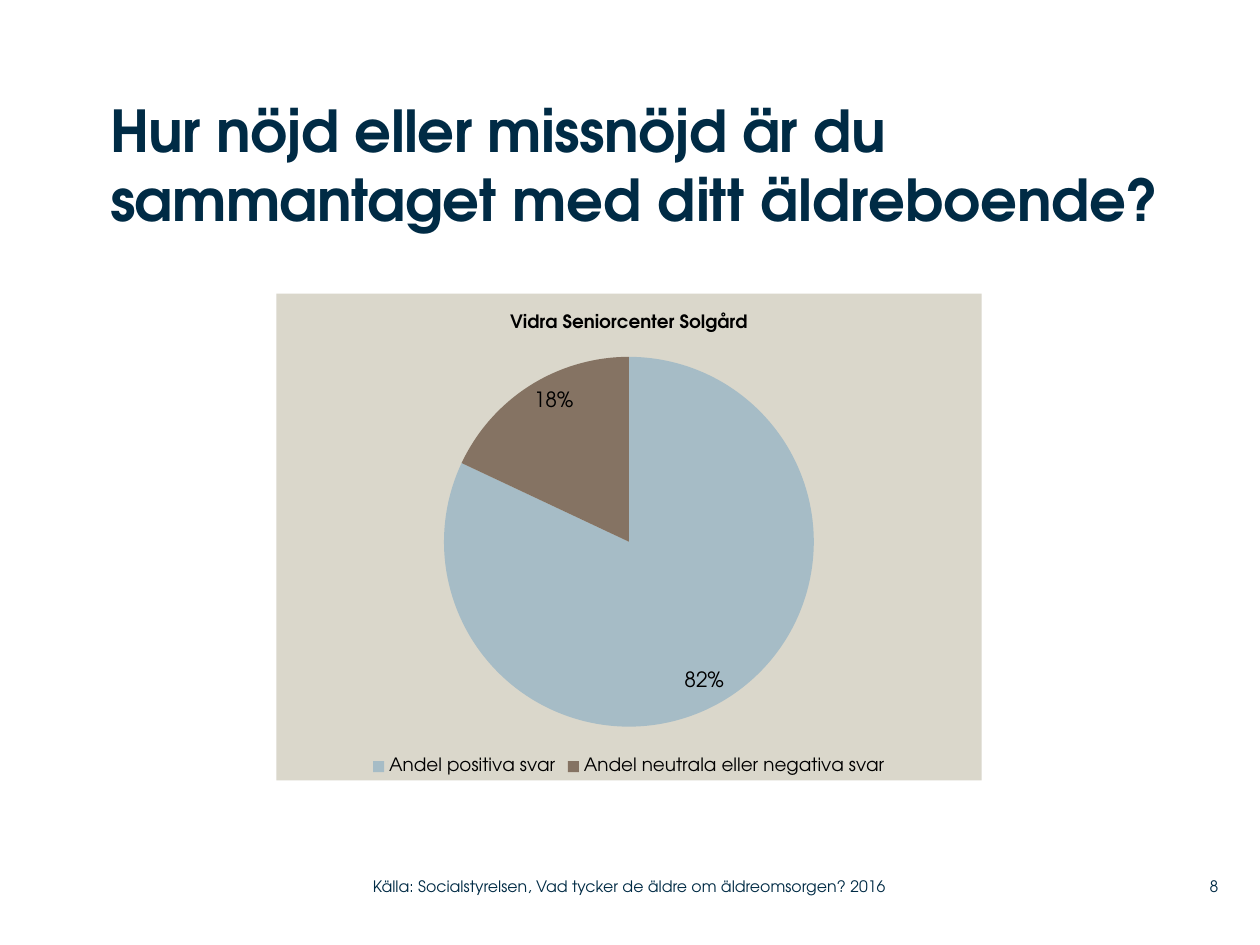
from dataclasses import dataclass

from lxml.etree import SubElement
from pptx import Presentation
from pptx.chart.data import CategoryChartData
from pptx.dml.color import RGBColor
from pptx.enum.chart import XL_CHART_TYPE as ChartType
from pptx.enum.chart import XL_LABEL_POSITION as LabelPosition
from pptx.enum.chart import XL_LEGEND_POSITION as LegendPosition
from pptx.enum.text import MSO_ANCHOR as Anchor
from pptx.enum.text import MSO_AUTO_SIZE as AutoSize
from pptx.enum.text import PP_ALIGN as Align
from pptx.oxml import parse_xml
from pptx.oxml.ns import nsdecls, qn
from pptx.util import Cm, Pt


@dataclass(frozen=True)
class Theme:
    font: str = "TeX Gyre Adventor"
    navy: str = "002B45"
    black: str = "000000"
    sand: str = "DAD7CB"
    blue: str = "A6BCC6"
    brown: str = "857363"
    title: float = 33
    chart: float = 18
    label: float = 12
    caption: float = 10.5
    footer: float = 9


theme = Theme()


def style(font, size, color, bold=False):
    font.name = theme.font
    font.size = Pt(size)
    font.bold = bold
    font.color.rgb = RGBColor.from_string(color)


def prepare(frame, anchor):
    frame.margin_left = frame.margin_right = 0
    frame.margin_top = frame.margin_bottom = 0
    frame.word_wrap = True
    frame.auto_size = AutoSize.NONE
    frame.vertical_anchor = anchor


deck = Presentation()
deck.slide_width, deck.slide_height = Cm(25.4), Cm(19.05)
page = deck.slides.add_slide(deck.slide_layouts[5])

# Title, with the first part set slightly tighter
title = page.shapes.title
title.left, title.top, title.width, title.height = Cm(2.22), Cm(1.91), Cm(22.43), Cm(3.6)
prepare(title.text_frame, Anchor.TOP)
para = title.text_frame.paragraphs[0]
para.alignment = Align.LEFT
for text, spacing in (("Hur nöjd eller missnöjd är du sammantaget ", "-30"),
                      ("med ditt äldreboende?", "0")):
    span = para.add_run()
    span.text = text
    span.font._element.set("spc", spacing)
style(para.font, theme.title, theme.navy, bold=True)

# Pie chart
answers = CategoryChartData(number_format="0")
answers.categories = ["Andel positiva svar", "Andel neutrala eller negativa svar"]
answers.add_series("Series 1", (82, 18))
chart = page.shapes.add_chart(ChartType.PIE, Cm(5.57), Cm(5.92), Cm(14.22), Cm(9.81),
                              answers).chart
style(chart.font, theme.chart, theme.black)

chart.has_title = True
chart.chart_title.include_in_layout = False
heading = chart.chart_title.text_frame
heading.text = "Vidra Seniorcenter Solgård"
style(heading.paragraphs[0].font, theme.caption, theme.black, bold=True)

chart.has_legend = True
chart.legend.position = LegendPosition.BOTTOM
chart.legend.include_in_layout = False
style(chart.legend.font, theme.caption, theme.black)

pie = chart.plots[0]
pie.vary_by_categories = True
for index, color in enumerate((theme.blue, theme.brown)):
    fill = pie.series[0].points[index].format.fill
    fill.solid()
    fill.fore_color.rgb = RGBColor.from_string(color)

pie.has_data_labels = True
labels = pie.data_labels
labels.show_percentage = True
labels.show_value = False
labels.number_format = "0%"
labels.number_format_is_linked = False
labels.position = LabelPosition.INSIDE_END
style(labels.font, theme.label, theme.black)

# Place of the pie within the chart, as shares of its size
plot_area = chart._chartSpace.chart.plotArea
for old in plot_area.findall(qn("c:layout")):
    plot_area.remove(old)
layout = parse_xml(f"<c:layout {nsdecls('c')}/>")
plot_area.insert(0, layout)
manual = SubElement(layout, qn("c:manualLayout"))
for tag, value in (("layoutTarget", "inner"), ("xMode", "edge"), ("yMode", "edge"),
                   ("x", "0.23"), ("y", "0.13"), ("w", "0.54"), ("h", "0.76")):
    SubElement(manual, qn(f"c:{tag}")).set("val", value)

# Chart background, without a border
chart._chartSpace.chart.addnext(parse_xml(
    f"<c:spPr {nsdecls('c', 'a')}><a:solidFill><a:srgbClr val='{theme.sand}'/></a:solidFill>"
    "<a:ln><a:noFill/></a:ln></c:spPr>"))

# Source line and page number
for text, left, width, alignment in (
        ("Källa: Socialstyrelsen, Vad tycker de äldre om äldreomsorgen? 2016",
         7.52, 11.25, Align.LEFT),
        ("8", 23.37, 1.19, Align.RIGHT)):
    box = page.shapes.add_textbox(Cm(left), Cm(17.5), Cm(width), Cm(0.74))
    prepare(box.text_frame, Anchor.MIDDLE)
    para = box.text_frame.paragraphs[0]
    para.text = text
    para.alignment = alignment
    style(para.font, theme.footer, theme.navy)

deck.save("out.pptx")
